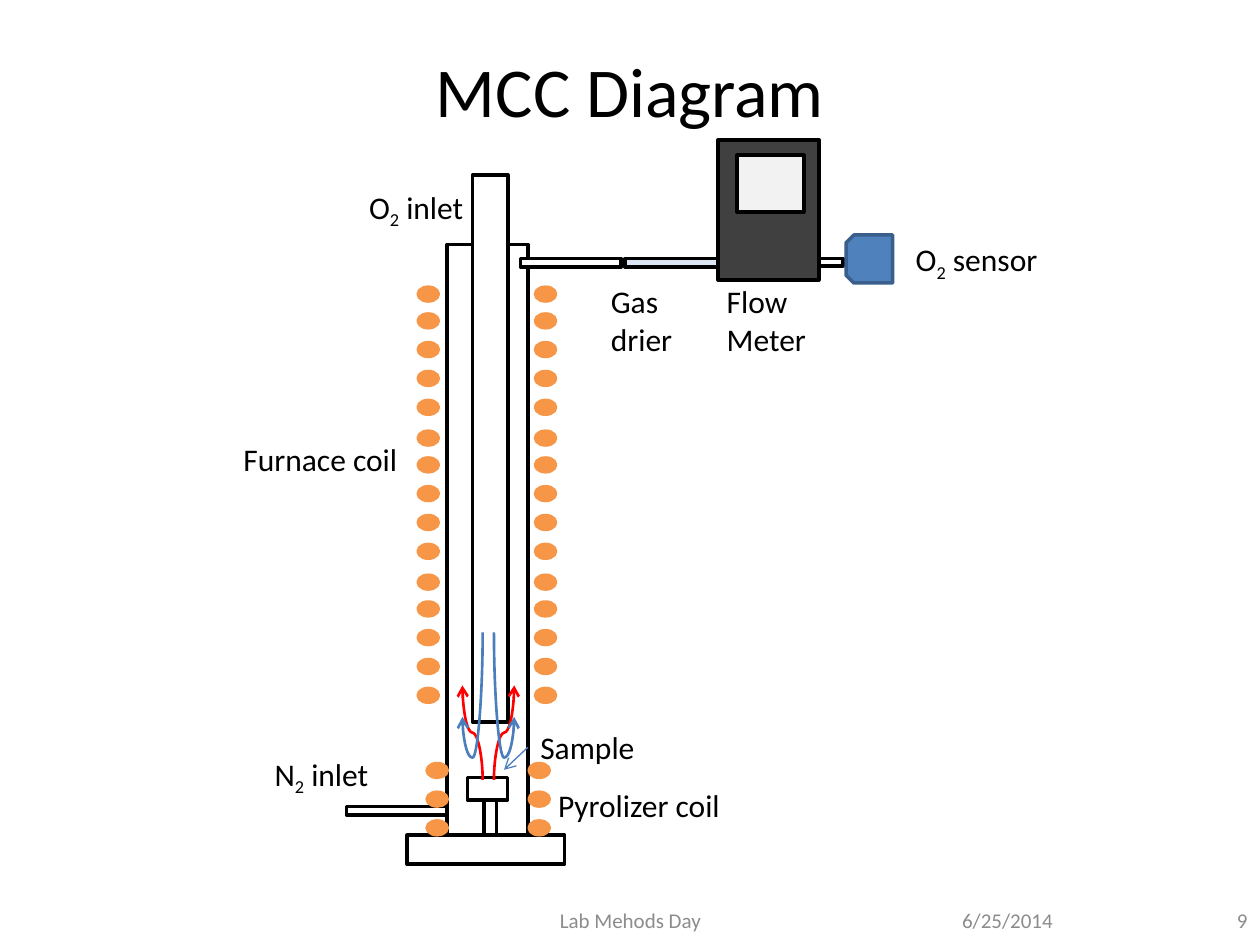
from lxml.etree import SubElement
from pptx import Presentation
from pptx.dml.color import RGBColor
from pptx.enum.shapes import MSO_CONNECTOR, MSO_SHAPE
from pptx.enum.text import MSO_ANCHOR, MSO_AUTO_SIZE, PP_ALIGN
from pptx.oxml.ns import qn
from pptx.util import Pt

BLACK, WHITE, GRAY = "000000", "FFFFFF", "8C8C8C"
ORANGE, BLUE, RED = "F79646", "4B7EBC", "FF0000"


def color(code):
    return RGBColor.from_string(code)


def style(para, size, code, align=PP_ALIGN.LEFT):
    para.alignment = align
    para.font.size = Pt(size)
    para.font.name = "Calibri"
    para.font.color.rgb = color(code)


def place(slide, box, x, y, w, h, fill=WHITE, line=BLACK, kind=MSO_SHAPE.RECTANGLE):
    left, top = box
    shape = slide.shapes.add_shape(kind, Pt(left + x), Pt(top + y), Pt(w), Pt(h))
    shape.shadow.inherit = False
    shape.fill.solid()
    shape.fill.fore_color.rgb = color(fill)
    shape.line.color.rgb = color(line)
    shape.line.width = Pt(2)
    return shape


def label(slide, box, text, x, y, w, h=28.8):
    left, top = box
    shape = slide.shapes.add_textbox(Pt(left + x), Pt(top + y), Pt(w), Pt(h))
    frame = shape.text_frame
    frame.word_wrap = False
    frame.auto_size = MSO_AUTO_SIZE.SHAPE_TO_FIT_TEXT
    para = frame.paragraphs[0]
    head, *rest = text.split("|")
    para.text = head
    for i, part in enumerate(rest):
        run = para.add_run()
        run.text = part
        if i % 2 == 0:
            run._r.get_or_add_rPr().set("baseline", "-25000")
    style(para, 18, BLACK)
    return shape


def arrow(slide, box, kind, x1, y1, x2, y2, code, width):
    left, top = box
    link = slide.shapes.add_connector(
        kind, Pt(left + x1), Pt(top + y1), Pt(left + x2), Pt(top + y2))
    link.line.color.rgb = color(code)
    link.line.width = Pt(width)
    props = link._element.spPr
    SubElement(props.find(qn("a:ln")), qn("a:tailEnd"), type="arrow")
    SubElement(props, qn("a:effectLst"))
    return link


def flow(slide, box, x1, y1, x2, y2, code, turn, flips, bend):
    span, rise = abs(y2 - y1), abs(x2 - x1)
    x, y = (x1 + x2 - span) / 2, (y1 + y2 - rise) / 2
    link = arrow(slide, box, MSO_CONNECTOR.CURVE,
                 x, y, x + span, y + rise, code, 1.5)
    props = link._element.spPr
    frame = props.find(qn("a:xfrm"))
    frame.set("rot", str(turn * 60000))
    for flip in flips:
        frame.set("flip" + flip, "1")
    guides = props.find(qn("a:prstGeom")).find(qn("a:avLst"))
    SubElement(guides, qn("a:gd"), name="adj1", fmla=f"val {bend}")


def coil(slide, box, sides, rows):
    for x in sides:
        for y in rows:
            place(slide, box, x, y, 11.5, 7.9, ORANGE, ORANGE, MSO_SHAPE.OVAL)


def column(slide, box):
    parts = [
        (123.6, 39.7, 46.1, 345.6),
        (138, 0, 20.2, 312.5),
        (144.5, 355.7, 7.2, 29.5),
        (100.6, 377.3, 90, 16.6),
        (135.1, 344.2, 23, 13),
        (66, 360.8, 57.6, 5),
    ]
    for part in parts:
        place(slide, box, *part)
    steps = (0, 15.3, 31.7, 48.2, 64.7)
    coil(slide, box, (107, 174),
         [64.1 + 82.3 * i + step for i in range(3) for step in steps])
    coil(slide, box, (112.1, 170.4), [336.3 + 16.4 * i for i in range(3)])

    label(slide, box, "N|2| inlet", 17.8, 327.7, 70)
    label(slide, box, "Pyrolizer coil", 179.8, 345.7, 108)
    label(slide, box, "Furnace coil", 0, 147.7, 104)
    label(slide, box, "O|2| inlet", 71.8, 3.7, 70)
    sample = label(slide, box, "Sample", 169.7, 312.6, 69)
    link = arrow(slide, box, MSO_CONNECTOR.STRAIGHT,
                 169.7, 327, 156, 339.9, BLUE, 0.75)
    link.begin_connect(sample, 1)

    flow(slide, box, 150.2, 345.7, 161.8, 291.7, RED, 90, "HV", 50000)
    flow(slide, box, 143.8, 345.7, 132.2, 291.7, RED, 270, "V", 50000)
    flow(slide, box, 143.8, 261.4, 132.2, 309.7, BLUE, 90, "", 148200)
    flow(slide, box, 150.2, 261.4, 161.8, 309.7, BLUE, 270, "H", 148200)


def outlet(slide, box):
    place(slide, box, 0, 67.7, 57.6, 5)
    place(slide, box, 59.8, 67.7, 57.6, 5, "DCE6F2")
    place(slide, box, 113, 0, 57.6, 80, "404040")
    place(slide, box, 123.8, 8.7, 38.2, 32.4, "F2F2F2")
    place(slide, box, 170.6, 67.7, 13.7, 4.3)
    probe = place(slide, box, 185.7, 54.7, 27.4, 26.6, "4F81BD", "3A5F8C",
                  MSO_SHAPE.SNIP_2_SAME_RECTANGLE)
    probe.rotation = 270
    label(slide, box, "Gas drier", 44.6, 77.7, 70.6)
    label(slide, box, "Flow\nMeter", 110.8, 77.7, 60.5, 51)
    label(slide, box, "O|2| sensor", 218.8, 53.9, 85.7)


def header(slide, x, y, w, h):
    title = slide.shapes.title
    title.left, title.top, title.width, title.height = Pt(x), Pt(y), Pt(w), Pt(h)
    title.text_frame.text = "MCC Diagram"
    title.text_frame.vertical_anchor = MSO_ANCHOR.MIDDLE
    style(title.text_frame.paragraphs[0], 40, BLACK, PP_ALIGN.CENTER)


def footer(slide, y, h):
    notes = [
        ("6/25/2014", 491.8, 167.8, PP_ALIGN.CENTER),
        ("Lab Mehods Day", 246.2, 228.2, PP_ALIGN.CENTER),
        ("9", 684, 36, PP_ALIGN.RIGHT),
    ]
    for text, x, w, align in notes:
        frame = slide.shapes.add_textbox(Pt(x), Pt(y), Pt(w), Pt(h)).text_frame
        frame.word_wrap = True
        frame.vertical_anchor = MSO_ANCHOR.MIDDLE
        frame.text = text
        style(frame.paragraphs[0], 12, GRAY, align)


def main():
    deck = Presentation()
    deck.slide_width, deck.slide_height = Pt(720), Pt(540)
    slide = deck.slides.add_slide(deck.slide_layouts[5])
    header(slide, 36, 6, 648, 90)
    footer(slide, 511.2, 28.8)
    column(slide, (132, 100))
    outlet(slide, (297.4, 80))
    deck.save("out.pptx")


if __name__ == "__main__":
    main()
